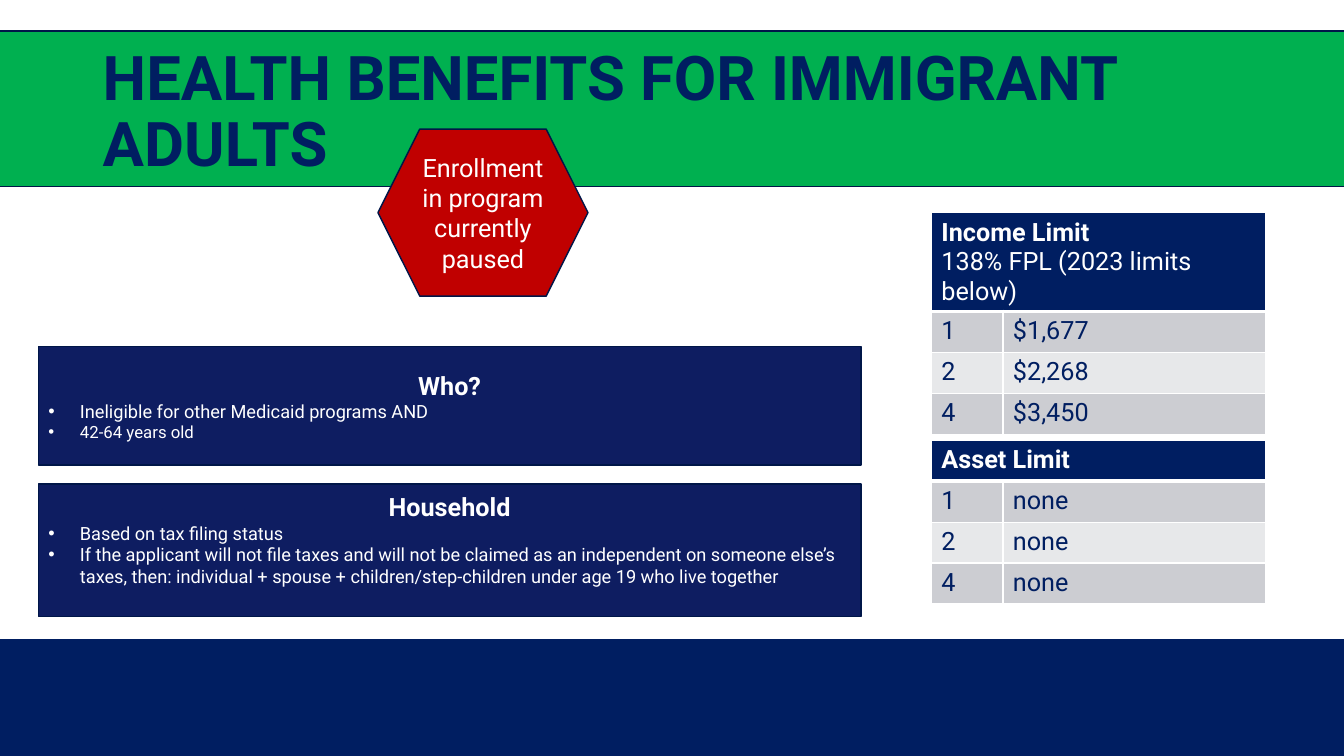
from dataclasses import dataclass

from lxml.etree import SubElement
from pptx import Presentation
from pptx.dml.color import RGBColor
from pptx.enum.shapes import MSO_SHAPE
from pptx.enum.text import MSO_ANCHOR, MSO_AUTO_SIZE, PP_ALIGN
from pptx.oxml.ns import qn
from pptx.util import Pt


@dataclass(frozen=True)
class Theme:
    font: str = "Roboto"
    navy: str = "001E61"
    panel: str = "0E1D61"
    edge: str = "001648"
    green: str = "00B050"
    red: str = "C00000"
    white: str = "FFFFFF"
    dark: str = "CCCDD2"
    light: str = "E7E8EA"
    title: int = 44
    head: int = 18
    body: int = 13
    small: int = 12


THEME = Theme()


def color(code):
    return RGBColor.from_string(code)


def write(para, text, size=THEME.head, ink=THEME.white, bold=False,
          align=PP_ALIGN.LEFT, bullet=False, spacing=1.0):
    para.alignment = align
    para.line_spacing = spacing
    para.space_before = para.space_after = Pt(0)
    props = para._p.get_or_add_pPr()
    indent = Pt(22.5) if bullet else 0
    props.set("marL", str(indent))
    props.set("indent", str(-indent))
    if bullet:
        SubElement(props, qn("a:buFont"), typeface="Arial")
        SubElement(props, qn("a:buChar"), char="•")
    else:
        SubElement(props, qn("a:buNone"))
    run = para.add_run()
    run.text = text
    font = run.font
    font.name, font.size, font.bold = THEME.font, Pt(size), bold
    font.color.rgb = color(ink)


def paint(shape, fill, edge=None):
    shape.fill.solid()
    shape.fill.fore_color.rgb = color(fill)
    if edge:
        shape.line.color.rgb = color(edge)
        shape.line.width = Pt(1)
    else:
        shape.line.fill.background()


def draw(slide, kind, box, fill, edge=None):
    shape = slide.shapes.add_shape(kind, *map(Pt, box))
    shape.shadow.inherit = False
    paint(shape, fill, edge)
    return shape


def set_frame(shape, foot=3.6):
    frame = shape.text_frame
    frame.word_wrap = True
    frame.auto_size = MSO_AUTO_SIZE.NONE
    frame.vertical_anchor = MSO_ANCHOR.MIDDLE
    frame.margin_left = frame.margin_right = Pt(7.2)
    frame.margin_top, frame.margin_bottom = Pt(3.6), Pt(foot)
    return frame


def place(slide, holder, box):
    holder.left, holder.top, holder.width, holder.height = map(Pt, box)
    slide.shapes._spTree.append(holder._element)


def add_header(slide, box):
    left, top, width, height = box
    draw(slide, MSO_SHAPE.RECTANGLE, box, THEME.green, THEME.edge)
    title = slide.shapes.title
    place(slide, title, (left + 93.6, top + 6.5, 828, height - 6.5))
    write(set_frame(title).paragraphs[0], "HEALTH BENEFITS FOR IMMIGRANT ADULTS",
          size=THEME.title, ink=THEME.navy, bold=True, spacing=0.9)


def add_panel(slide, holder, box, head, items, foot=3.6):
    place(slide, holder, box)
    paint(holder, THEME.panel, THEME.edge)
    frame = set_frame(holder, foot)
    write(frame.paragraphs[0], head, bold=True, align=PP_ALIGN.CENTER)
    for text, size in items:
        write(frame.add_paragraph(), text, size=size, bullet=True)


def add_notice(slide, box):
    sign = draw(slide, MSO_SHAPE.HEXAGON, box, THEME.red, THEME.edge)
    write(set_frame(sign).paragraphs[0], "Enrollment in program currently paused",
          align=PP_ALIGN.CENTER)


def style_cell(cell, fill, base=1):
    props = cell._tc.get_or_add_tcPr()
    for side, width in (("L", 1), ("R", 1), ("T", 1), ("B", base)):
        line = SubElement(props, qn(f"a:ln{side}"), w=str(Pt(width)))
        solid = SubElement(line, qn("a:solidFill"))
        SubElement(solid, qn("a:srgbClr"), val=THEME.white)
    cell.fill.solid()
    cell.fill.fore_color.rgb = color(fill)


def add_limits(slide, box, head, note, rows):
    left, top, width, height = box
    step = 29.2
    frame = slide.shapes.add_table(len(rows) + 1, 2, *map(Pt, box))
    table = frame.table
    table.columns[0].width = Pt(51.1)
    table.columns[1].width = Pt(width - 51.1)
    table.rows[0].height = Pt(height - step * len(rows))
    top_cell = table.cell(0, 0)
    top_cell.merge(table.cell(0, 1))
    for col in range(2):
        style_cell(table.cell(0, col), THEME.navy, base=3)
    write(top_cell.text_frame.paragraphs[0], head, bold=True)
    if note:
        write(top_cell.text_frame.add_paragraph(), note)
    for row, pair in enumerate(rows, 1):
        table.rows[row].height = Pt(step)
        for col, text in enumerate(pair):
            cell = table.cell(row, col)
            style_cell(cell, THEME.dark if row % 2 else THEME.light)
            write(cell.text_frame.paragraphs[0], text, ink=THEME.navy)


def main():
    deck = Presentation()
    deck.slide_width, deck.slide_height = Pt(960), Pt(540)
    slide = deck.slides.add_slide(deck.slide_layouts[3])
    who, house = slide.placeholders[1], slide.placeholders[2]

    draw(slide, MSO_SHAPE.RECTANGLE, (0, 456.5, 960, 83.5), THEME.navy)
    add_header(slide, (-27.4, 22.3, 995.8, 110.9))
    add_panel(slide, who, (27.4, 247.7, 587.5, 84.6), "Who?", [
        ("Ineligible for other Medicaid programs AND", THEME.body),
        ("42-64 years old", THEME.small),
    ])
    add_notice(slide, (270, 92.2, 150, 119.4))
    add_panel(slide, house, (27.4, 345.6, 587.5, 94.8), "Household", [
        ("Based on tax filing status", THEME.body),
        ("If the applicant will not file taxes and will not be claimed as an "
         "independent on someone else’s taxes, then: individual + spouse + "
         "children/step-children under age 19 who live together", THEME.body),
    ], foot=18.8)

    sizes = ("1", "2", "4")
    add_limits(slide, (665.3, 151.9, 239, 157.5), "Income Limit",
               "138% FPL (2023 limits below)",
               list(zip(sizes, ("$1,677", "$2,268", "$3,450"))))
    add_limits(slide, (665.3, 314.6, 239, 116.8), "Asset Limit", None,
               [(size, "none") for size in sizes])
    deck.save("out.pptx")


if __name__ == "__main__":
    main()
